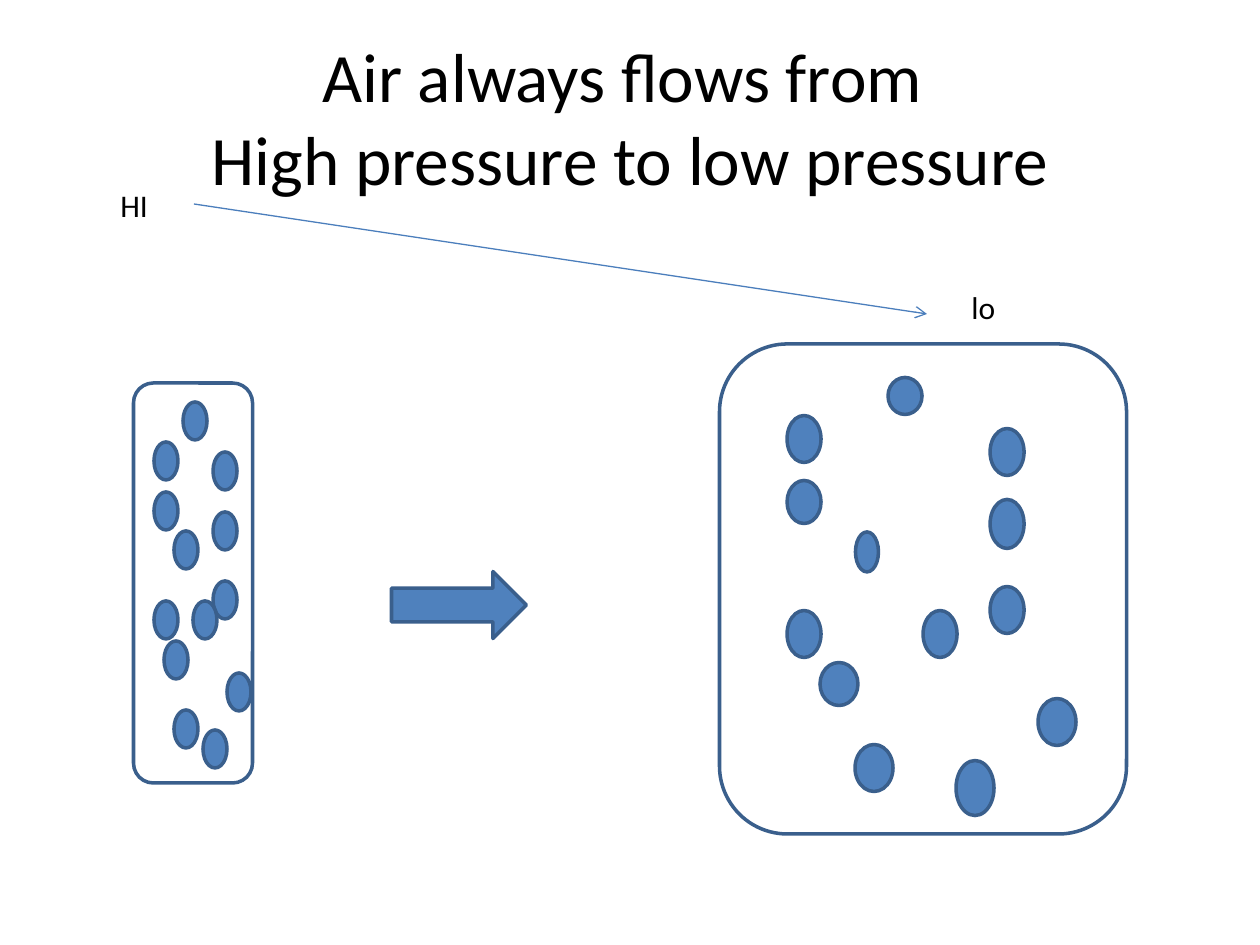
import pptx
import pptx.util
import pptx.dml.color
import pptx.enum.shapes
import pptx.enum.text
import pptx.oxml
import pptx.oxml.ns

RGB = pptx.dml.color.RGBColor
KIND = pptx.enum.shapes.MSO_SHAPE
TEXT = pptx.enum.text

BLUE = RGB(0x4F, 0x81, 0xBD)
EDGE = RGB(0x3A, 0x5F, 0x8C)
FLOW = RGB(0x4B, 0x7E, 0xBC)
BLACK = RGB(0, 0, 0)
SCALE = 914400 / 126


def px(*vals):
    return [round(val * SCALE) for val in vals]


def dress(item, style):
    for name, val in style.items():
        setattr(item, name, val)


class Board:
    font = {"name": "Calibri"}
    frame = {"word_wrap": True, "auto_size": TEXT.MSO_AUTO_SIZE.NONE}

    def __init__(self, deck):
        self.slide = deck.slides.add_slide(deck.slide_layouts[5])
        self.shapes = self.slide.shapes

    def words(self, shape, text, size, align):
        frame = shape.text_frame
        frame.text = text
        dress(frame, self.frame)
        for para in frame.paragraphs:
            para.alignment = align
            for run in para.runs:
                dress(run.font, {**self.font, "size": pptx.util.Pt(size)})
                run.font.color.rgb = BLACK

    def title(self, text, box):
        shape = self.shapes.title
        dress(shape, dict(zip(("left", "top", "width", "height"), px(*box))))
        self.words(shape, text, 39.6, TEXT.PP_ALIGN.CENTER)
        shape.text_frame.vertical_anchor = TEXT.MSO_ANCHOR.MIDDLE

    def label(self, text, box):
        self.words(self.shapes.add_textbox(*px(*box)), text, 18, TEXT.PP_ALIGN.LEFT)

    def shape(self, kind, mid, size, fill=BLUE, turn=0, home=None):
        (x, y), (wide, high) = mid, size
        box = px(x - wide / 2, y - high / 2, wide, high)
        shape = (home or self).shapes.add_shape(kind, *box)
        shape.rotation = turn
        shape.shadow.inherit = False
        if fill is None:
            shape.fill.background()
        else:
            shape.fill.solid()
            shape.fill.fore_color.rgb = fill
        shape.line.color.rgb = EDGE
        shape.line.width = pptx.util.Pt(2)

    def tank(self, mid, size, dots):
        group = self.shapes.add_group_shape()
        self.shape(KIND.ROUNDED_RECTANGLE, mid, size, None, 90, group)
        for x, y, wide, high in dots:
            self.shape(KIND.OVAL, (x, y), (wide, high), BLUE, 90, group)

    def arrow(self, start, end):
        kind = pptx.enum.shapes.MSO_CONNECTOR.STRAIGHT
        line = self.shapes.add_connector(kind, *px(*start, *end))
        line.line.color.rgb = FLOW
        line.line.width = pptx.util.Pt(0.75)
        props = line._element.spPr
        tail = pptx.oxml.parse_xml(
            f'<a:tailEnd {pptx.oxml.ns.nsdecls("a")} type="arrow"/>')
        props.find(pptx.oxml.ns.qn("a:ln")).append(tail)
        props.append(pptx.oxml.parse_xml(
            f'<a:effectLst {pptx.oxml.ns.nsdecls("a")}/>'))


LOOSE = [
    (804, 634, 47, 34), (905, 396, 37, 34), (804, 502, 43, 34),
    (1007, 610, 47, 34), (975, 788, 55, 38), (940, 634, 47, 34),
    (804, 439, 47, 34), (1007, 452, 47, 34), (874, 768, 47, 38),
    (1007, 524, 49, 34), (1057, 722, 47, 38), (839, 684, 43, 38),
    (867, 552, 40, 23),
]
DENSE = [
    (166, 620), (195, 421), (166, 511), (225, 600), (215, 749),
    (205, 620), (166, 461), (225, 471), (186, 729), (225, 531),
    (239, 692), (176, 660), (186, 550),
]


def main():
    deck = pptx.Presentation()
    deck.slide_width, deck.slide_height = px(1260, 945)
    board = Board(deck)
    board.title("Air always flows from \vHigh pressure to low pressure",
                (63, 38, 1134, 157))
    board.tank((923, 589), (490, 407), LOOSE)
    board.tank((193, 583), (400, 119), [(x, y, 38, 24) for x, y in DENSE])
    board.shape(KIND.RIGHT_ARROW, (459, 605), (135, 67))
    board.label("HI", (108, 180, 139, 50))
    board.label("lo", (959, 282, 79, 50))
    board.arrow((194, 204), (927, 314))
    deck.save("out.pptx")


if __name__ == "__main__":
    main()
